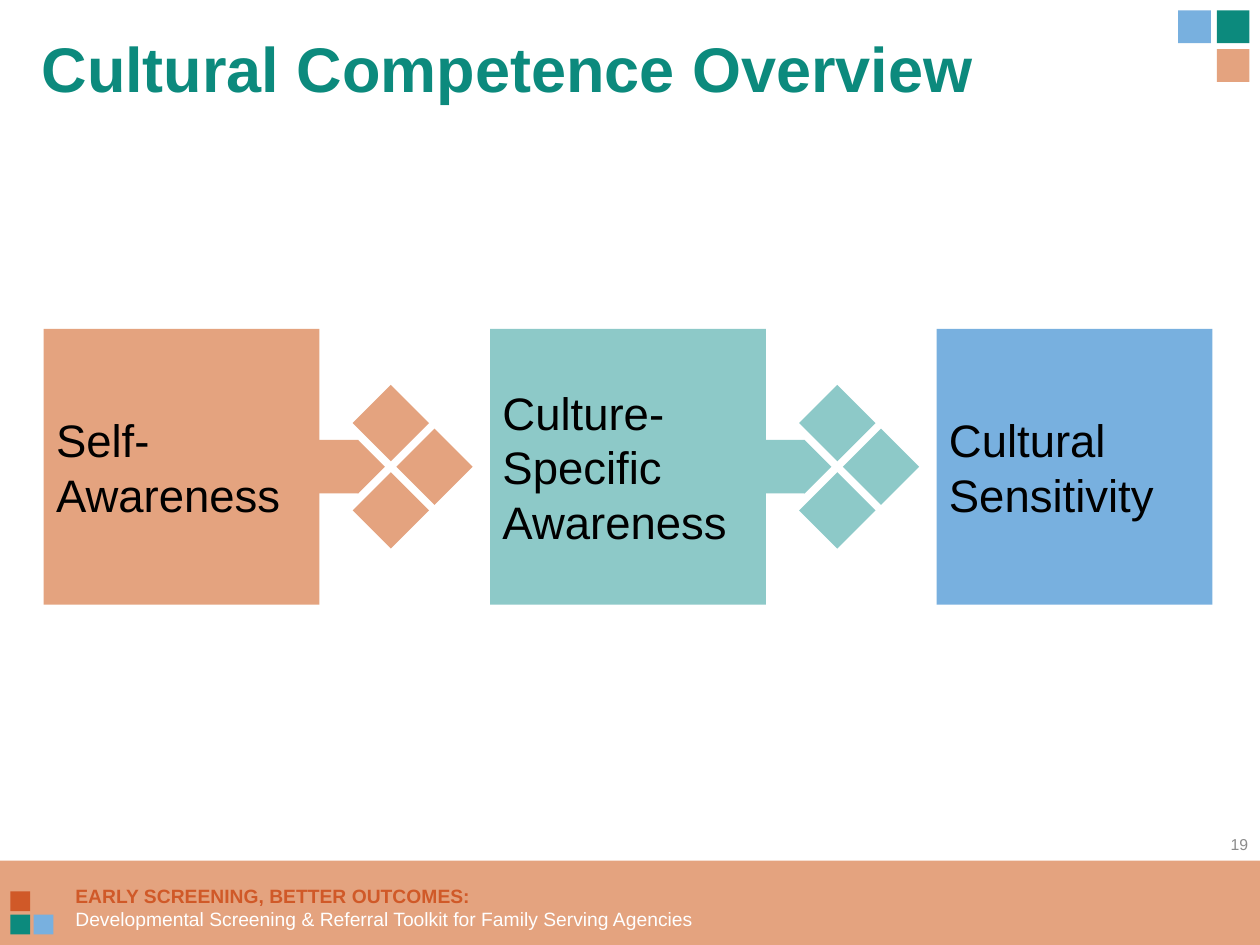
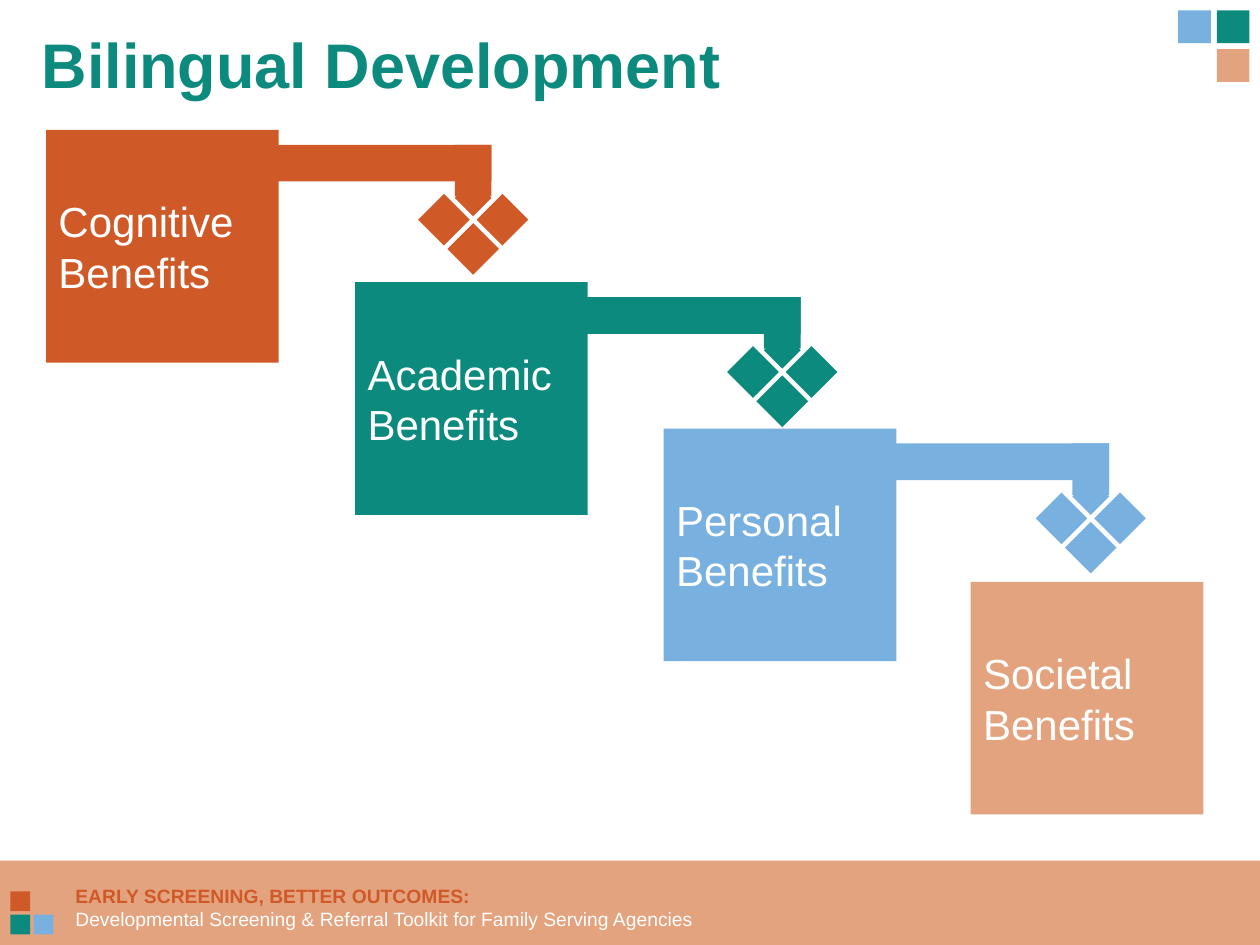
"""Build the cultural competence and bilingual development slides."""
from pptx import Presentation
from pptx.dml.color import RGBColor
from pptx.enum.shapes import MSO_SHAPE
from pptx.enum.text import MSO_ANCHOR, PP_ALIGN
from pptx.util import Cm, Pt

FONT = "Arial"
SAND, TEAL, SKY = "E4A37F", "0C8A7D", "78B0DF"
RUST, MINT = "D05928", "8DC9C8"
WHITE, BLACK, GRAY = "FFFFFF", "000000", "8C8C8C"
RECT, DIAMOND = MSO_SHAPE.RECTANGLE, MSO_SHAPE.DIAMOND
hex_color = RGBColor.from_string


def add_block(slide, geometry, left, top, width, height, color):
    block = slide.shapes.add_shape(geometry, Cm(left), Cm(top), Cm(width), Cm(height))
    block.shadow.inherit = False
    block.fill.solid()
    block.fill.fore_color.rgb = hex_color(color)
    block.line.fill.background()
    return block


def write(frame, text, size, color, bold=False, align=PP_ALIGN.LEFT,
          anchor=MSO_ANCHOR.TOP, spacing=None):
    frame.word_wrap = True
    frame.vertical_anchor = anchor
    first = frame.paragraphs[0]
    paragraph = frame.add_paragraph() if first.runs else first
    paragraph.text = text
    paragraph.alignment = align
    paragraph.line_spacing = spacing
    for run in paragraph.runs:
        run.font.name = FONT
        run.font.size = Pt(size)
        run.font.bold = bold
        run.font.color.rgb = hex_color(color)


deck = Presentation()
deck.slide_width, deck.slide_height = Cm(25.4), Cm(19.05)
blank = deck.slide_layouts[6]
competence = deck.slides.add_slide(blank)
bilingual = deck.slides.add_slide(blank)

for slide, heading, top, inset, spacing in (
    (competence, "Cultural Competence Overview", 0.63, 0.13, 0.9),
    (bilingual, "Bilingual Development", 0.51, 0, None),
):
    add_block(slide, RECT, 0, 17.35, 25.4, 1.7, SAND)
    footer = slide.shapes.add_textbox(Cm(1.27), Cm(17.7), Cm(22.02), Cm(1.19)).text_frame
    write(footer, "EARLY SCREENING, BETTER OUTCOMES:", 11, RUST, bold=True)
    write(footer, "Developmental Screening & Referral Toolkit for Family Serving Agencies", 11, WHITE)

    for column, row, color in ((1, 1, SAND), (1, 0, TEAL), (0, 0, SKY)):
        add_block(slide, RECT, 23.75 + 0.78 * column, 0.21 + 0.78 * row, 0.66, 0.66, color)
    for column, row, color in ((0, 0, RUST), (0, 1, TEAL), (1, 1, SKY)):
        add_block(slide, RECT, 0.21 + 0.47 * column, 17.97 + 0.47 * row, 0.4, 0.4, color)

    title = slide.shapes.add_textbox(Cm(0.84), Cm(top), Cm(22.86), Cm(3)).text_frame
    title.margin_left = title.margin_right = title.margin_bottom = 0
    title.margin_top = Cm(inset)
    write(title, heading, 36, TEAL, bold=True, spacing=spacing)

page_number = competence.shapes.add_textbox(Cm(19.69), Cm(16.51), Cm(5.72), Cm(1.02)).text_frame
write(page_number, "19", 9, GRAY, align=PP_ALIGN.RIGHT, anchor=MSO_ANCHOR.MIDDLE)

stages = (("Self-Awareness", SAND), ("Culture- Specific Awareness", MINT),
          ("Cultural Sensitivity", SKY))
stage_top, stage_size = 6.63, 5.56
middle = stage_top + stage_size / 2
for index, (label, color) in enumerate(stages):
    left = 0.88 + 9 * index
    if index < len(stages) - 1:
        for dx, dy in ((6.23, -0.88), (7.11, 0), (6.23, 0.88)):
            add_block(competence, DIAMOND, left + dx, middle + dy - 0.77, 1.54, 1.54, color)
        add_block(competence, DIAMOND, left + 5.8, middle - 0.54, 1.08, 1.08, color)
        add_block(competence, RECT, left + 0.97, middle - 0.54, 5.37, 1.08, color)
    stage = add_block(competence, RECT, left, stage_top, stage_size, stage_size, color)
    write(stage.text_frame, label, 26, BLACK, anchor=MSO_ANCHOR.MIDDLE)

benefits = (("Cognitive", RUST, 0.93, 2.62), ("Academic", TEAL, 7.16, 5.69),
            ("Personal", SKY, 13.38, 8.64), ("Societal", SAND, 19.57, 11.73))
for kind, color, left, top in benefits:
    benefit = add_block(bilingual, RECT, left, top, 4.69, 4.69, color)
    write(benefit.text_frame, f"{kind}\vBenefits", 24, WHITE, anchor=MSO_ANCHOR.MIDDLE)
    if kind != benefits[-1][0]:
        for dx, dy in ((8.68, 1.29), (8.09, 1.88), (7.5, 1.29)):
            add_block(bilingual, DIAMOND, left + dx, top + dy, 1.04, 1.04, color)
        add_block(bilingual, DIAMOND, left + 8.24, top + 1, 0.74, 0.74, color)
        add_block(bilingual, RECT, left + 8.24, top + 0.3, 0.74, 1.04, color)
        add_block(bilingual, RECT, left + 4.55, top + 0.3, 4.43, 0.74, color)

deck.save("out.pptx")
